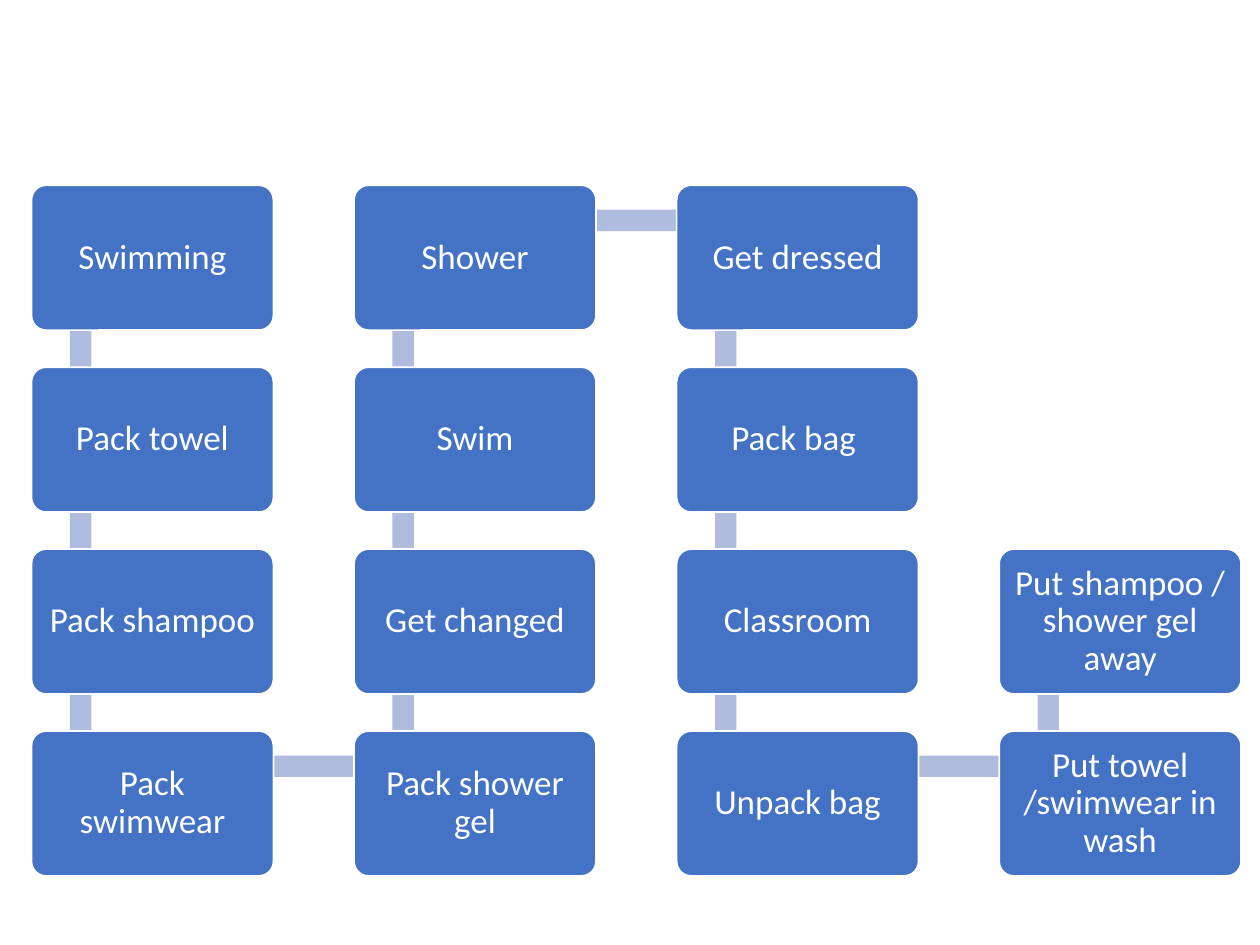
from pptx import Presentation
from pptx.dml.color import RGBColor
from pptx.enum import shapes, text
from pptx.util import Inches, Pt

# Content: columns in order of travel, each step with its grid row
COLUMNS = [
    [("Swimming", 0), ("Pack towel", 1), ("Pack shampoo", 2), ("Pack swimwear", 3)],
    [("Pack shower gel", 3), ("Get changed", 2), ("Swim", 1), ("Shower", 0)],
    [("Get dressed", 0), ("Pack bag ", 1), ("Classroom", 2), ("Unpack bag", 3)],
    [("Put towel /swimwear in wash", 3), ("Put shampoo / shower gel away", 2)],
]

BLUE = RGBColor(0x44, 0x72, 0xC4)
PALE_BLUE = RGBColor(0xB0, 0xBC, 0xDE)
WHITE = RGBColor(0xFF, 0xFF, 0xFF)

# Grid, in inches
LEFT, TOP = 0.25, 1.47
COL_STEP, ROW_STEP = 2.56, 1.444
BOX_W, BOX_H = 1.92, 1.15
ANCHOR_X, ANCHOR_Y = 0.39, 0.28  # where the bars meet inside a box
BAR_H = 0.17
INSET = 0.08


def add_bar(s, start, end):
    """Draw the bar that links the boxes at two grid positions."""
    (x1, y1), (x2, y2) = start, end
    length = abs(x2 - x1) + abs(y2 - y1)
    mid_x = (x1 + x2) / 2 + ANCHOR_X
    mid_y = (y1 + y2) / 2 + ANCHOR_Y
    sp = s.shapes.add_shape(
        shapes.MSO_SHAPE.RECTANGLE, Inches(mid_x - length / 2),
        Inches(mid_y - BAR_H / 2), Inches(length), Inches(BAR_H))
    sp.rotation = 0 if x1 != x2 else 90 if y2 > y1 else 270
    sp.shadow.inherit = False
    sp.fill.solid()
    sp.fill.fore_color.rgb = PALE_BLUE
    sp.line.fill.background()


def add_box(s, label, x, y):
    sp = s.shapes.add_shape(shapes.MSO_SHAPE.ROUNDED_RECTANGLE,
                            Inches(x), Inches(y), Inches(BOX_W), Inches(BOX_H))
    sp.adjustments[0] = 0.1
    sp.shadow.inherit = False
    sp.fill.solid()
    sp.fill.fore_color.rgb = BLUE
    sp.line.color.rgb = WHITE
    sp.line.width = Pt(1)
    tf = sp.text_frame
    tf.word_wrap = True
    tf.vertical_anchor = text.MSO_ANCHOR.MIDDLE
    tf.margin_left = tf.margin_right = Inches(INSET)
    tf.margin_top = tf.margin_bottom = Inches(INSET)
    p = tf.paragraphs[0]
    p.alignment = text.PP_ALIGN.CENTER
    p.line_spacing = 0.9
    r = p.add_run()
    r.text = label
    r.font.name = "Calibri"
    r.font.size = Pt(20)
    r.font.color.rgb = WHITE


def main():
    prs = Presentation()
    prs.slide_width, prs.slide_height = Inches(10), Inches(7.5)
    s = prs.slides.add_slide(prs.slide_layouts[6])

    steps = [(label, (LEFT + col * COL_STEP, TOP + row * ROW_STEP))
             for col, column in enumerate(COLUMNS) for label, row in column]

    # Each bar goes in before its own box, so the boxes cover its ends
    for i, (label, pos) in enumerate(steps):
        if i + 1 < len(steps):
            add_bar(s, pos, steps[i + 1][1])
        add_box(s, label, *pos)

    prs.save("out.pptx")


if __name__ == "__main__":
    main()
